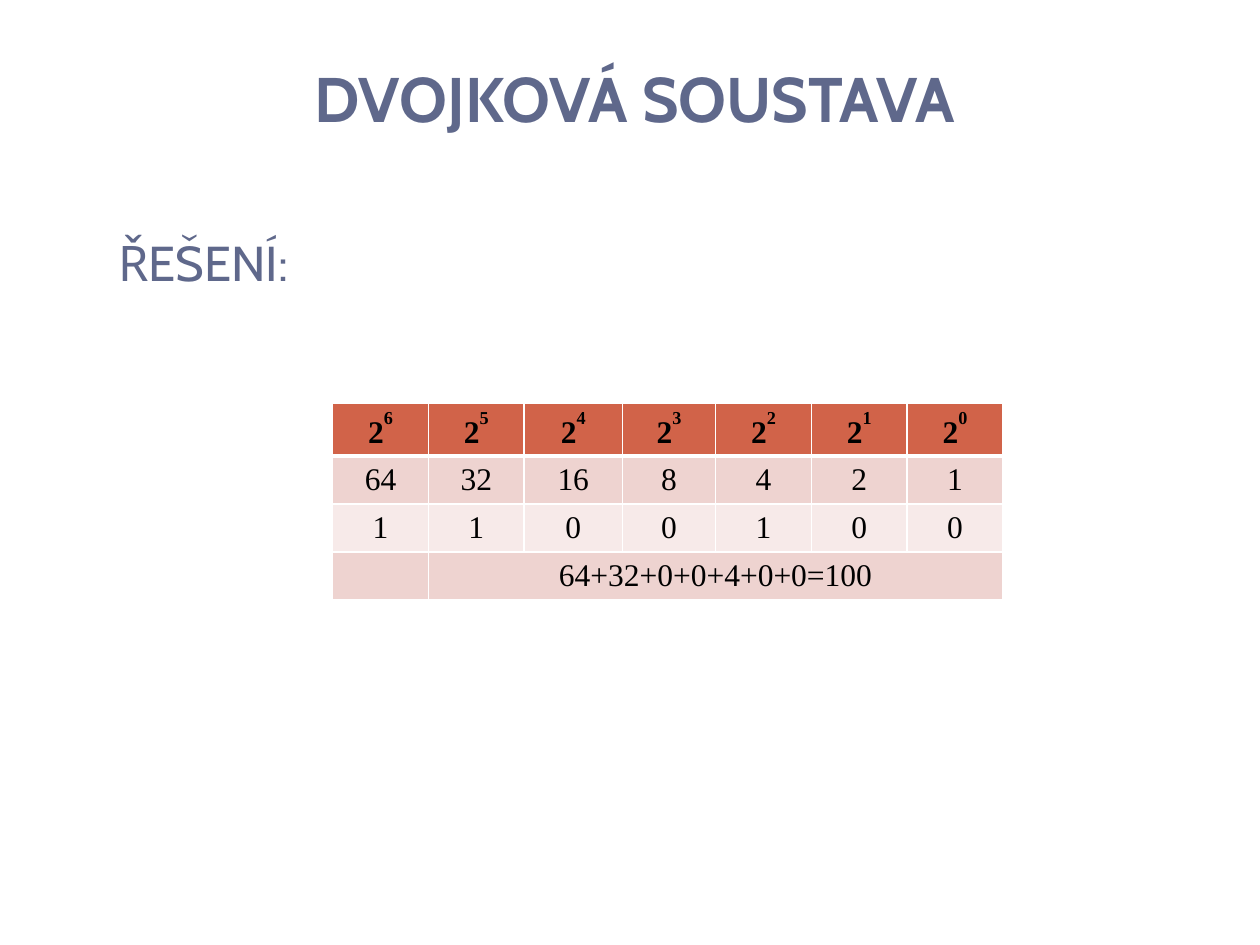
import pptx
import pptx.util
import pptx.dml.color
import pptx.enum.text
import pptx.oxml
import pptx.oxml.ns
import lxml.etree

Inches = pptx.util.Inches
Pt = pptx.util.Pt
Align = pptx.enum.text.PP_ALIGN
Anchor = pptx.enum.text.MSO_ANCHOR

COLORS = {
    "title": "5F688B",
    "ink": "000000",
    "head": "D16349",
    "band": "EED3D0",
    "pale": "F7EAE9",
    "rule": "FFFFFF",
}


def color(name):
    return pptx.dml.color.RGBColor.from_string(COLORS[name])


class Deck:
    def __init__(self):
        self.show = pptx.Presentation()
        self.show.slide_width = Inches(10)
        self.show.slide_height = Inches(7.5)
        self.slide = self.show.slides.add_slide(self.show.slide_layouts[6])
        self.sans = "Cabin"
        self.serif = "Times New Roman"

    def style(self, run, font, size, tint, bold=False):
        run.font.name = font
        run.font.size = Pt(size)
        run.font.bold = bold
        run.font.color.rgb = color(tint)

    def text(self, box, words, size, bold=False, align=Align.LEFT,
             anchor=Anchor.TOP, space=1.0, before=0, indent=0):
        shape = self.slide.shapes.add_textbox(*map(Inches, box))
        frame = shape.text_frame
        frame.word_wrap = True
        frame.vertical_anchor = anchor
        frame.text = words
        line = frame.paragraphs[0]
        line.alignment = align
        line.line_spacing = space
        line.space_before = Pt(before)
        line._p.get_or_add_pPr().set("marL", str(Inches(indent)))
        self.style(line.runs[0], self.sans, size, "title", bold)

    def edges(self, cell, head):
        props = cell._tc.get_or_add_tcPr()
        for spot, side in enumerate(("lnL", "lnR", "lnT", "lnB")):
            width = 3 if head and side == "lnB" else 1
            line = pptx.oxml.parse_xml(
                f'<a:{side} {pptx.oxml.ns.nsdecls("a")} w="{Pt(width)}">'
                f'<a:solidFill><a:srgbClr val="{COLORS["rule"]}"/></a:solidFill>'
                f'</a:{side}>')
            props.insert(spot, line)

    def cell(self, cell, words, fill, power=None):
        head = power is not None
        cell.fill.solid()
        cell.fill.fore_color.rgb = color(fill)
        cell.vertical_anchor = Anchor.MIDDLE
        cell.margin_left = cell.margin_right = Inches(0.05)
        cell.margin_top = cell.margin_bottom = 0
        cell.text = words
        line = cell.text_frame.paragraphs[0]
        line.alignment = Align.CENTER
        if head:
            run = line.add_run()
            run.text = power
            run.font._element.set("baseline", "60000")
        for run in line.runs:
            self.style(run, self.serif, 18, "ink", head)
        self.edges(cell, head)

    def table(self, left, top, widths, heights, rows, fills):
        grid = self.slide.shapes.add_table(
            len(rows), len(widths), Inches(left), Inches(top),
            Inches(sum(widths)), Inches(sum(heights))).table
        for col, width in zip(grid.columns, widths):
            col.width = Inches(width)
        for row, height in zip(grid.rows, heights):
            row.height = Inches(height)
        for r, (row, fill) in enumerate(zip(rows, fills)):
            for c, words in enumerate(row):
                if r == 0:
                    self.cell(grid.cell(r, c), "2", fill, words)
                else:
                    self.cell(grid.cell(r, c), words, fill)
        return grid


def main():
    deck = Deck()
    deck.text((0.43, 0.44, 9.21, 0.68), "DVOJKOVÁ SOUSTAVA", 36, bold=True,
              align=Align.CENTER, anchor=Anchor.BOTTOM, space=Pt(20))
    deck.text((0.75, 1.47, 8.66, 1.18), "ŘEŠENÍ:", 28,
              space=1.7, before=6, indent=0.09)

    powers = range(6, -1, -1)
    bits = "1100100"
    total = "64+32+0+0+4+0+0=100"
    rows = [
        [str(n) for n in powers],
        [str(2 ** n) for n in powers],
        list(bits),
        ["", total] + [""] * 5,
    ]
    grid = deck.table(2.64, 3.2, [0.76, 0.76, 0.78, 0.74, 0.76, 0.76, 0.76],
                      [0.42, 0.38, 0.38, 0.38], rows,
                      ["head", "band", "pale", "band"])
    grid.cell(3, 1).merge(grid.cell(3, 6))
    deck.show.save("out.pptx")


if __name__ == "__main__":
    main()
